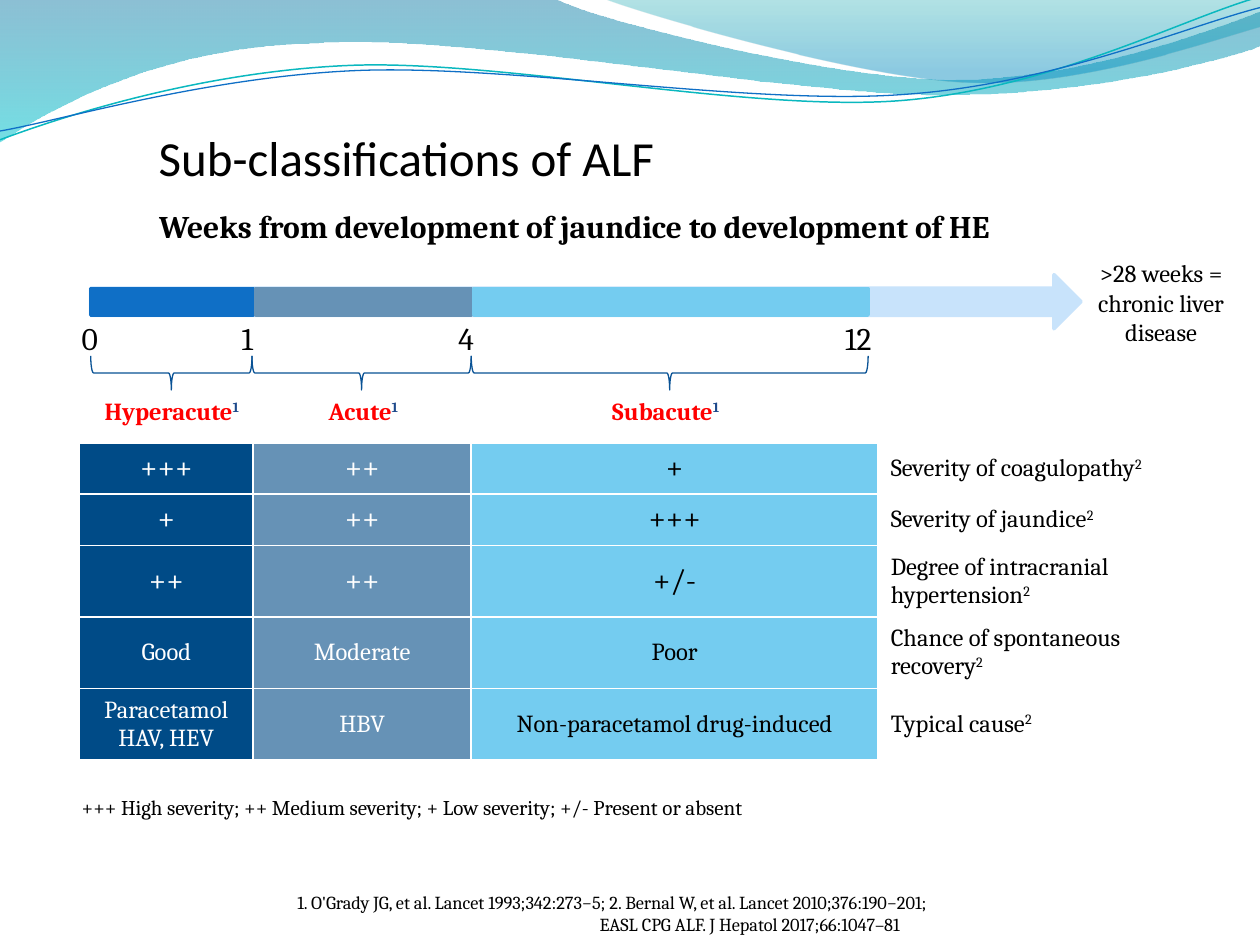
"""Build a slide on the sub-classifications of acute liver failure."""
from dataclasses import dataclass
from itertools import pairwise
from math import cos, radians, sin

from lxml import etree
from pptx import Presentation
from pptx import util as u
from pptx.dml.color import RGBColor
from pptx.enum import shapes, text
from pptx.oxml.ns import qn


@dataclass(frozen=True)
class Theme:
    head: str = "Calibri"
    body: str = "Cambria"
    black: str = "000000"
    white: str = "FFFFFF"
    red: str = "FF0000"
    note: str = "1D498B"
    brace: str = "095295"
    arrow: str = "C8E3FB"
    bars: tuple = ("0F6FC6", "6692B6", "74CCF0")
    columns: tuple = ("004B87", "6692B6", "74CCF0", None)
    inks: tuple = ("FFFFFF", "FFFFFF", "000000", "000000")
    title: float = 28
    large: float = 18
    medium: float = 14
    small: float = 12
    cite: float = 10.5


T = Theme()
MSO, ALIGN, ANCHOR, FIT = shapes.MSO_SHAPE, text.PP_ALIGN, text.MSO_ANCHOR, text.MSO_AUTO_SIZE

TITLE = "Sub-classifications of ALF"
SUBTITLE = "Weeks from development of jaundice to development of HE"
CHRONIC = ">28 weeks = chronic liver disease"
KEY = "+++ High severity; ++ Medium severity; + Low severity; +/- Present or absent"
CITATIONS = [
    ("1. O'Grady JG, et al. Lancet 1993;342:273−5; 2. Bernal W, et al. Lancet 2010;376:190−201;", 2.19),
    ("EASL CPG ALF. J Hepatol 2017;66:1047–81", 4.59),
]
WEEKS = [("0", 0.55, 0.29), ("1", 1.82, 0.39), ("4", 3.54, 0.39), ("12", 6.61, 0.55)]
PHASES = [("Hyperacute", 0.58), ("Acute", 2.1), ("Subacute", 4.5)]
BAR_EDGES = [0.71, 2.02, 3.75, 6.9]
BRACE_EDGES = [0.72, 2, 3.74, 6.89]
COLS = [1.38, 1.73, 3.23, 2.21]
ROWS = [
    (0.4, T.large, ["+++", "++", "+", "Severity of coagulopathy"]),
    (0.41, T.large, ["+", "++", "+++", "Severity of jaundice"]),
    (0.56, T.large, ["++", "++", "+/-", "Degree of intracranial hypertension"]),
    (0.56, T.medium, ["Good", "Moderate", "Poor", "Chance of spontaneous recovery"]),
    (0.56, T.medium, ["Paracetamol\nHAV, HEV", "HBV", "Non-paracetamol drug-induced", "Typical cause"]),
]
BANDS = [
    ((-0.01, -0.01, 10.02, 1.14),
     [(0, 0), (4.4, -0.01), (4.76, 0.17, 6.64, 0.63, 7.58, 0.63), (8.53, 0.63, 9.58, 0.26, 10, 0.09),
      (10.01, 0.36), (9.83, 0.44, 8.7, 0.76, 7.46, 0.75), (6.22, 0.75, 3.82, 0.28, 2.57, 0.34),
      (1.29, 0.36, 0.46, 0.83, -0.01, 1.13), (0, 0)], [(0, "0074A1", 45), (1, "00C6CF", 55)]),
    ((4.79, -0.01, 5.21, 0.7),
     [(4.79, -0.01), (5.09, 0.11, 6.82, 0.62, 7.69, 0.65), (8.56, 0.69, 9.61, 0.32, 10, 0.21),
      (10, 0), (4.79, -0.01)], [(0, "00A1A9", 30), (0.8, "008BBF", 45)]),
]
WAVE_TURN = 357.3
WAVES = [
    ((-0.02, 0.22, 10.02, 0.71),
     [(0, 1.11), (0.48, 0.93, 1.58, 0.57, 2.77, 0.52), (3.95, 0.47, 5.93, 0.89, 7.13, 0.8),
      (8.33, 0.71, 9.38, 0.15, 9.98, -0.02)], "0AB8BF", 0.85),
    ((-0.02, 0.3, 10.03, 0.58),
     [(0, 1.04), (0.47, 0.96, 1.64, 0.61, 2.83, 0.56), (4.03, 0.51, 5.97, 0.84, 7.17, 0.75),
      (8.36, 0.67, 9.41, 0.21, 10, 0.06)], "0F6FC6", 0.75),
]


def rgb(code):
    return RGBColor.from_string(code)


def place(sp, *box):
    sp.left, sp.top, sp.width, sp.height = map(u.Inches, box)


def add_run(p, words, size, color=T.black, bold=False, font=T.body, raised=False):
    r = p.add_run()
    r.text = words
    f = r.font
    f.name, f.size, f.bold = font, u.Pt(size), bold
    f.color.rgb = rgb(color)
    if raised:
        r._r.get_or_add_rPr().set("baseline", "30000")


def add_text(s, box, size, words, align=ALIGN.LEFT, **style):
    tf = s.shapes.add_textbox(*map(u.Inches, box)).text_frame
    tf.word_wrap, tf.auto_size = True, FIT.SHAPE_TO_FIT_TEXT
    p = tf.paragraphs[0]
    p.alignment = align
    add_run(p, words, size, **style)
    return p


def paint(sp, fill=None, line=None, width=2):
    sp.shadow.inherit = False
    if fill:
        sp.fill.solid()
        sp.fill.fore_color.rgb = rgb(fill)
    else:
        sp.fill.background()
    if line:
        sp.line.color.rgb = rgb(line)
        sp.line.width = u.Pt(width)
    else:
        sp.line.fill.background()


def add_shape(s, kind, box, **look):
    sp = s.shapes.add_shape(kind, *map(u.Inches, box))
    paint(sp, **look)
    return sp


def add_curve(s, box, steps, turn=0):
    left, top, width, height = box
    builder = s.shapes.build_freeform(u.Inches(left), u.Inches(top))
    builder.add_line_segments([(u.Inches(left + width), u.Inches(top + height))], close=False)
    sp = builder.convert_to_shape()
    sp.rotation = turn
    outline = sp._element.find(".//" + qn("a:path"))
    for child in list(outline):
        outline.remove(child)
    c, k = cos(radians(-turn)), sin(radians(-turn))
    for i, step in enumerate(steps):
        tag = "a:cubicBezTo" if len(step) == 6 else "a:lnTo" if i else "a:moveTo"
        node = etree.SubElement(outline, qn(tag))
        for x, y in zip(step[::2], step[1::2]):
            dx, dy = x - left - width / 2, y - top - height / 2
            px, py = width / 2 + dx * c - dy * k, height / 2 + dx * k + dy * c
            etree.SubElement(node, qn("a:pt"), x=str(int(u.Inches(px))), y=str(int(u.Inches(py))))
    if steps[0] == steps[-1]:
        etree.SubElement(outline, qn("a:close"))
    return sp


def add_waves(s):
    curves = []
    for box, steps, stops in BANDS:
        sp = add_curve(s, box, steps)
        paint(sp)
        sp.fill.gradient()
        sp.fill.gradient_angle = 270
        for stop, (pos, color, alpha) in zip(sp.fill.gradient_stops, stops):
            stop.position = pos
            stop.color.rgb = rgb(color)
            etree.SubElement(stop._gs.find(qn("a:srgbClr")), qn("a:alpha"), val=str(alpha * 1000))
        curves.append(sp)
    for box, steps, color, width in WAVES:
        sp = add_curve(s, box, steps, WAVE_TURN)
        paint(sp, line=color, width=width)
        curves.append(sp)
    tree = s.slide_layout.slide_master.shapes._spTree
    for i, sp in enumerate(curves):
        sp._element.nvSpPr.cNvPr.set("id", str(100 + i))
        tree.insert(2 + i, sp._element)


def add_headings(s):
    title, body = s.placeholders
    place(title, 0.25, 0.25, 9, 1.25)
    place(body, 0.01, 7.09, 8.22, 0.41)
    for sp, (mx, my) in ((title, (1.01, 0.02)), (body, (0.16, 0.08))):
        tf = sp.text_frame
        tf.auto_size, tf.word_wrap = FIT.NONE, True
        tf.vertical_anchor = ANCHOR.BOTTOM
        tf.margin_left, tf.margin_bottom = u.Inches(mx), u.Inches(my)
    p = title.text_frame.paragraphs[0]
    p.alignment = ALIGN.LEFT
    add_run(p, TITLE, T.title, font=T.head)
    tf = body.text_frame
    for i, (words, indent) in enumerate(CITATIONS):
        p = tf.add_paragraph() if i else tf.paragraphs[0]
        pPr = p._p.get_or_add_pPr()
        pPr.set("marL", str(u.Inches(indent)))
        pPr.set("indent", "0")
        etree.SubElement(pPr, qn("a:buNone"))
        p.space_before = u.Pt(0)
        add_run(p, words, T.cite)
    add_text(s, (0.84, 1.59, 7.44, 0.4), T.large, SUBTITLE, ALIGN.CENTER, bold=True)


def add_timeline(s):
    for words, left, width in WEEKS:
        add_text(s, (left, 2.48, width, 0.4), T.large, words)
    add_shape(s, MSO.RIGHT_ARROW, (0.72, 2.18, 7.86, 0.43), fill=T.arrow, line=T.arrow)
    for (a, b), color in zip(pairwise(BAR_EDGES), T.bars):
        add_shape(s, MSO.RECTANGLE, (a + 0.01, 2.29, b - a - 0.02, 0.21), fill=color, line=color)
    add_text(s, (8.45, 2, 1.53, 0.81), T.medium, CHRONIC, ALIGN.CENTER)
    for (a, b), (phase, left) in zip(pairwise(BRACE_EDGES), PHASES):
        span, depth = b - a, 0.27
        box = ((a + b - depth) / 2, 2.96 - span / 2, depth, span)
        add_shape(s, MSO.LEFT_BRACE, box, line=T.brace, width=0.75).rotation = 270
        p = add_text(s, (left, 3.09, 1.57, 0.34), T.medium, phase, ALIGN.CENTER, color=T.red, bold=True)
        add_run(p, "1", T.medium, T.note, True, raised=True)


def style_cell(cell, fill):
    cell.vertical_anchor = ANCHOR.MIDDLE
    tcPr = cell._tc.get_or_add_tcPr()
    for side in ("lnL", "lnR", "lnT", "lnB"):
        ln = etree.SubElement(tcPr, qn("a:" + side), w=str(u.Pt(1)))
        etree.SubElement(etree.SubElement(ln, qn("a:solidFill")), qn("a:srgbClr"), val=T.white)
    if fill:
        cell.fill.solid()
        cell.fill.fore_color.rgb = rgb(fill)
    else:
        cell.fill.background()


def add_grid(s):
    box = (0.63, 3.52, sum(COLS), sum(row[0] for row in ROWS))
    tbl = s.shapes.add_table(len(ROWS), len(COLS), *map(u.Inches, box)).table
    tbl.first_row = tbl.horz_banding = False
    for col, width in zip(tbl.columns, COLS):
        col.width = u.Inches(width)
    for row, (height, size, words) in zip(tbl.rows, ROWS):
        row.height = u.Inches(height)
        for cell, entry, fill, ink in zip(row.cells, words, T.columns, T.inks):
            style_cell(cell, fill)
            tf = cell.text_frame
            for i, line in enumerate(entry.split("\n")):
                p = tf.add_paragraph() if i else tf.paragraphs[0]
                p.alignment = ALIGN.CENTER if fill else ALIGN.LEFT
                add_run(p, line, size if fill else T.medium, ink)
            if not fill:
                add_run(p, "2", T.medium, ink, raised=True)
    add_text(s, (0.55, 6.26, 6.44, 0.3), T.small, KEY)


prs = Presentation()
prs.slide_width, prs.slide_height = u.Inches(10), u.Inches(7.5)
s = prs.slides.add_slide(prs.slide_layouts[1])
for build in (add_waves, add_headings, add_timeline, add_grid):
    build(s)
prs.save("out.pptx")
